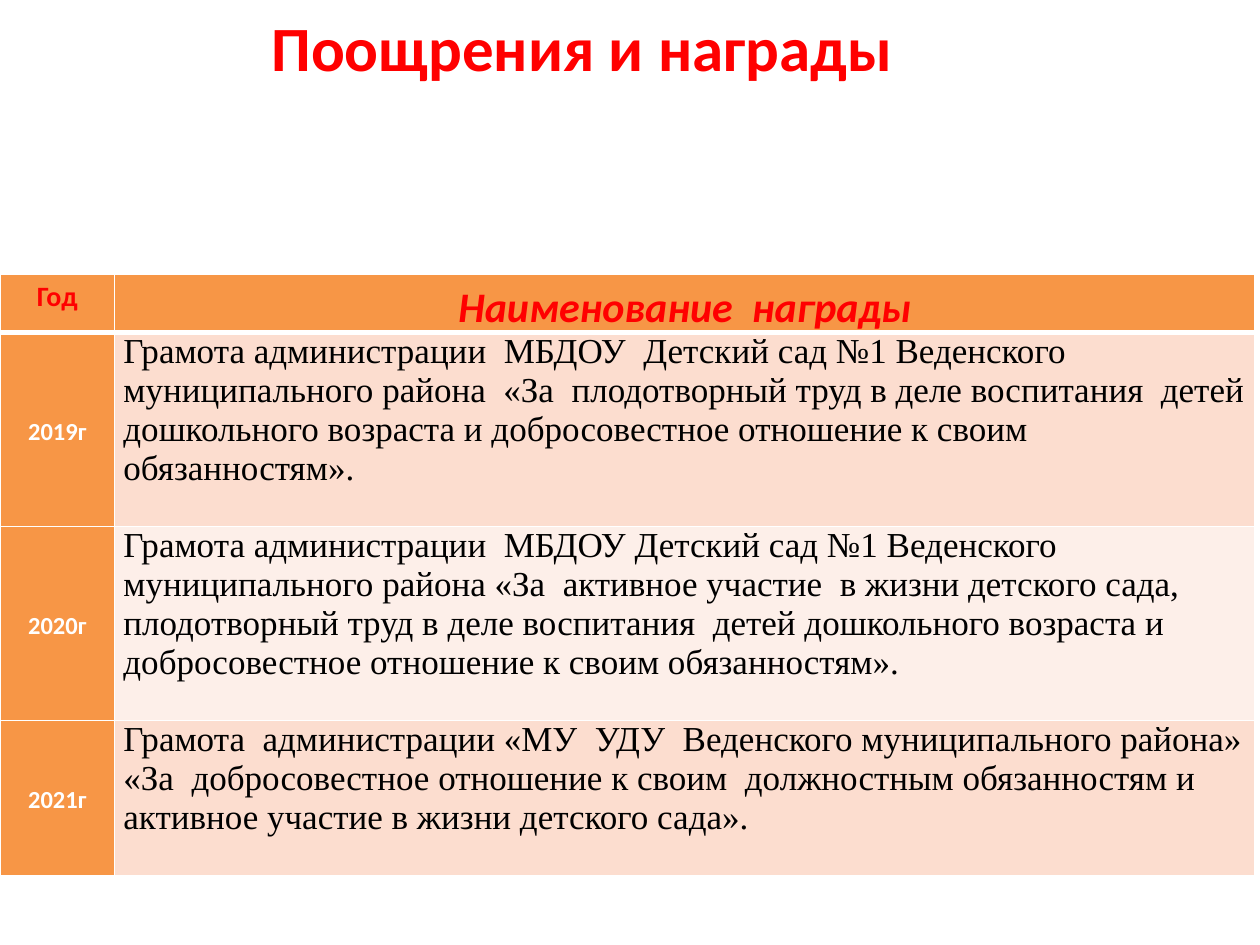
from lxml import etree
from pptx import Presentation
from pptx import util as u
from pptx.dml.color import RGBColor
from pptx.enum import text
from pptx.oxml import ns

RED = RGBColor(0xFF, 0x00, 0x00)
WHITE = RGBColor(0xFF, 0xFF, 0xFF)
BLACK = RGBColor(0x00, 0x00, 0x00)
ORANGE = RGBColor(0xF7, 0x96, 0x46)
PEACH = RGBColor(0xFC, 0xDD, 0xCF)
CREAM = RGBColor(0xFD, 0xEF, 0xE9)

CENTER = text.PP_ALIGN.CENTER
LEFT = text.PP_ALIGN.LEFT
MIDDLE = text.MSO_ANCHOR.MIDDLE
TOP = text.MSO_ANCHOR.TOP

AWARDS = [
    ("2019г",
     "Грамота администрации  МБДОУ  Детский сад №1 Веденского "
     "муниципального района  «За  плодотворный труд в деле воспитания  "
     "детей дошкольного возраста и добросовестное отношение к своим "
     "обязанностям»."),
    ("2020г",
     "Грамота администрации  МБДОУ Детский сад №1 Веденского "
     "муниципального района «За  активное участие  в жизни детского сада, "
     "плодотворный труд в деле воспитания  детей дошкольного возраста и "
     "добросовестное отношение к своим обязанностям»."),
    ("2021г",
     "Грамота  администрации «МУ  УДУ  Веденского муниципального района»\n"
     "«За  добросовестное отношение к своим  должностным обязанностям и "
     "активное участие в жизни детского сада»."),
]


class Deck:
    head = "Calibri"
    body = "Times New Roman"

    def __init__(self, slide):
        self.slide = slide

    def style(self, frame, size, color, font=head, bold=True, italic=False,
              align=CENTER, space=None):
        for par in frame.paragraphs:
            par.alignment = align
            par.line_spacing = space
            for run in par.runs:
                run.font.name = font
                run.font.size = u.Pt(size)
                run.font.bold = bold
                run.font.italic = italic
                run.font.color.rgb = color

    def title(self, words, left, top, width, height):
        box = self.slide.shapes.add_textbox(
            u.Inches(left), u.Inches(top), u.Inches(width), u.Inches(height))
        frame = box.text_frame
        frame.word_wrap = True
        frame.vertical_anchor = MIDDLE
        frame.text = words
        self.style(frame, 36, RED)

    def table(self, left, top, cols, rows):
        grid = self.slide.shapes.add_table(
            len(rows), len(cols), u.Inches(left), u.Inches(top),
            u.Inches(sum(cols)), u.Inches(sum(rows))).table
        for col, width in zip(grid.columns, cols):
            col.width = u.Inches(width)
        for row, height in zip(grid.rows, rows):
            row.height = u.Inches(height)
        return grid

    def cell(self, cell, words, fill, size, color, anchor=TOP, lines=(1, 1),
             **look):
        cell.text_frame.text = words
        cell.vertical_anchor = anchor
        cell.margin_left = cell.margin_right = u.Inches(0.07)
        cell.margin_top = cell.margin_bottom = 0
        self.style(cell.text_frame, size, color, **look)
        self.border(cell, *lines)
        cell.fill.solid()
        cell.fill.fore_color.rgb = fill

    def border(self, cell, top, bottom):
        props = cell._tc.get_or_add_tcPr()
        for side, width in zip("LRTB", (1, 1, top, bottom)):
            line = etree.SubElement(props, ns.qn(f"a:ln{side}"),
                                    w=str(u.Pt(width)))
            fill = etree.SubElement(line, ns.qn("a:solidFill"))
            etree.SubElement(fill, ns.qn("a:srgbClr"), val=str(WHITE))


def main():
    prs = Presentation()
    prs.slide_width, prs.slide_height = u.Inches(10), u.Inches(7.5)
    deck = Deck(prs.slides.add_slide(prs.slide_layouts[6]))

    # Title
    deck.title("Поощрения и награды", 0.12, -0.03, 9, 0.79)

    # Table header
    grid = deck.table(0, 2.18, [0.91, 9.05], [0.46, 1.54, 1.54, 1.23])
    deck.cell(grid.cell(0, 0), "Год", ORANGE, 16, RED, lines=(1, 3),
              space=1.15)
    deck.cell(grid.cell(0, 1), "Наименование  награды", ORANGE, 24, RED,
              lines=(1, 3), italic=True, space=1.15)

    # One row for each award
    for num, (year, award) in enumerate(AWARDS, 1):
        lines = (3 if num == 1 else 1, 1)
        deck.cell(grid.cell(num, 0), year, ORANGE, 14, WHITE, anchor=MIDDLE,
                  lines=lines, space=1.15)
        deck.cell(grid.cell(num, 1), award, PEACH if num % 2 else CREAM, 20,
                  BLACK, lines=lines, font=deck.body, bold=False, align=LEFT)

    prs.save("out.pptx")


if __name__ == "__main__":
    main()
